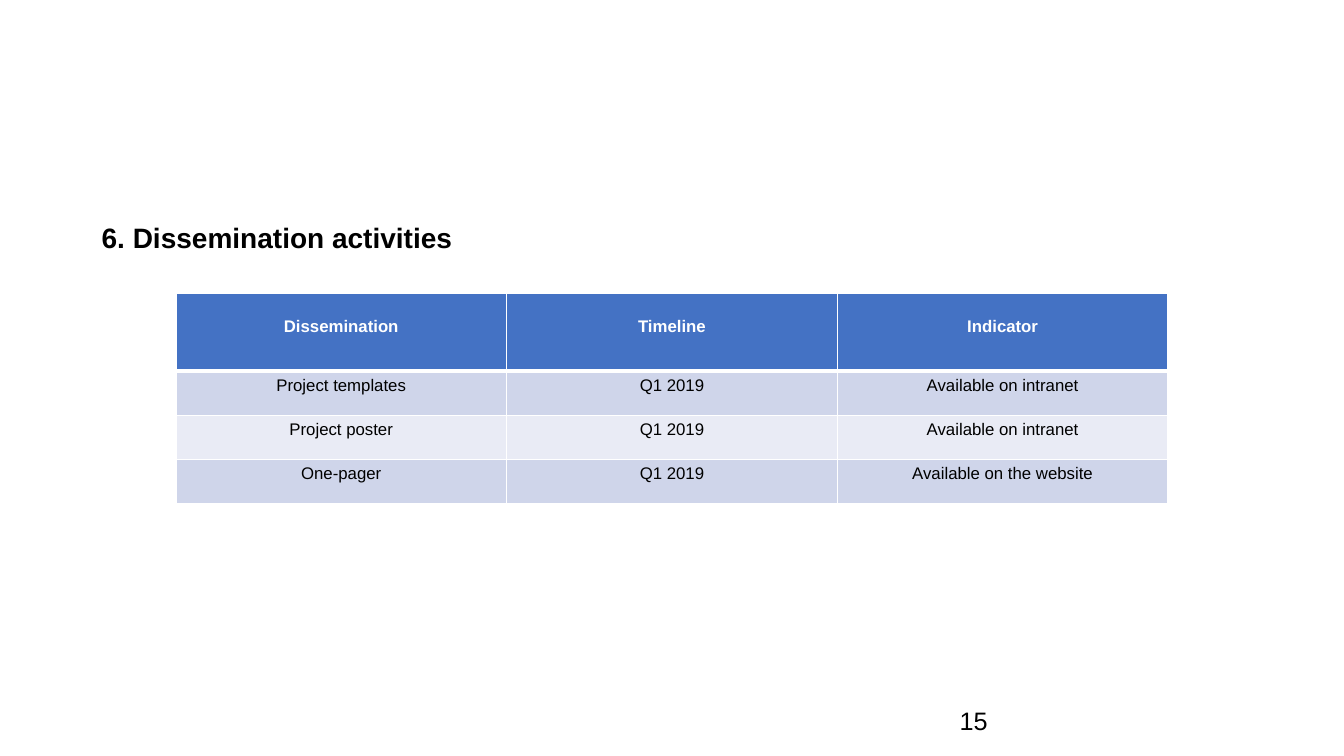
import lxml.etree
import pptx
import pptx.dml.color
import pptx.enum.text
import pptx.oxml.ns
import pptx.util
from dataclasses import dataclass

ALIGN = pptx.enum.text.PP_ALIGN
ANCHOR = pptx.enum.text.MSO_ANCHOR
Inches = pptx.util.Inches


@dataclass(frozen=True)
class Theme:
    font: str = "Arial"
    ink: str = "000000"
    white: str = "FFFFFF"
    header: str = "4472C4"
    bands: tuple = ("CFD5EA", "E9EBF5")
    title_size: int = 20
    number_size: int = 18
    table_size: int = 12
    rule: int = 1
    header_rule: int = 3


THEME = Theme()
SLIDE_W, SLIDE_H = 13.33, 7.5
COL_W, HEADER_H, ROW_H = 3.28, 0.77, 0.44

ACTIVITIES = [
    ("Dissemination", "Timeline", "Indicator"),
    ("Project templates", "Q1 2019", "Available on intranet"),
    ("Project poster", "Q1 2019", "Available on intranet"),
    ("One-pager", "Q1 2019", "Available on the website"),
]


def rgb(value):
    return pptx.dml.color.RGBColor.from_string(value)


def set_all(obj, values):
    for name, value in values.items():
        setattr(obj, name, value)


def write(tf, text, size, color=THEME.ink, bold=False, **paragraph):
    p = tf.paragraphs[0]
    set_all(p, paragraph)
    r = p.add_run()
    r.text = text
    set_all(r.font, {"name": THEME.font, "size": pptx.util.Pt(size), "bold": bold})
    r.font.color.rgb = rgb(color)


def add_text(s, box, text, size, anchor=ANCHOR.TOP, **style):
    tf = s.shapes.add_textbox(*map(Inches, box)).text_frame
    set_all(tf, {"word_wrap": True, "vertical_anchor": anchor})
    write(tf, text, size, **style)


def add_borders(cell, bottom):
    # Borders come before the fill in the cell properties
    tc_pr = cell._tc.get_or_add_tcPr()
    widths = {"lnL": THEME.rule, "lnR": THEME.rule, "lnT": THEME.rule, "lnB": bottom}
    for i, (side, width) in enumerate(widths.items()):
        ln = lxml.etree.Element(pptx.oxml.ns.qn(f"a:{side}"), w=str(pptx.util.Pt(width)))
        fill = lxml.etree.SubElement(ln, pptx.oxml.ns.qn("a:solidFill"))
        lxml.etree.SubElement(fill, pptx.oxml.ns.qn("a:srgbClr"), val=THEME.white)
        tc_pr.insert(i, ln)


def fill_cell(cell, text, row):
    header = row == 0
    cell.fill.solid()
    cell.fill.fore_color.rgb = rgb(THEME.header if header else THEME.bands[(row - 1) % 2])
    set_all(cell, {"vertical_anchor": ANCHOR.TOP,
                   "margin_top": Inches(0.24 if header else 0.05)})
    write(cell.text_frame, text, THEME.table_size,
          color=THEME.white if header else THEME.ink, bold=header, alignment=ALIGN.CENTER)
    add_borders(cell, THEME.header_rule if header else THEME.rule)


def add_grid(s, left, top, rows):
    heights = [HEADER_H] + [ROW_H] * (len(rows) - 1)
    box = (left, top, COL_W * len(rows[0]), sum(heights))
    table = s.shapes.add_table(len(rows), len(rows[0]), *map(Inches, box)).table
    for column in table.columns:
        column.width = Inches(COL_W)
    for i, (height, texts) in enumerate(zip(heights, rows)):
        table.rows[i].height = Inches(height)
        for j, text in enumerate(texts):
            fill_cell(table.cell(i, j), text, i)


def main():
    prs = pptx.Presentation()
    set_all(prs, {"slide_width": Inches(SLIDE_W), "slide_height": Inches(SLIDE_H)})
    s = prs.slides.add_slide(prs.slide_layouts[6])

    # Page number
    add_text(s, (9.42, 6.95, 3, 0.4), "15", THEME.number_size, ANCHOR.MIDDLE)

    # Section heading
    add_text(s, (0.91, 2.18, 10.26, 0.43), "6. Dissemination activities",
             THEME.title_size, bold=True, line_spacing=0.9)

    # Activities table, centred on the slide
    add_grid(s, (SLIDE_W - COL_W * 3) / 2, 2.91, ACTIVITIES)

    prs.save("out.pptx")


if __name__ == "__main__":
    main()
